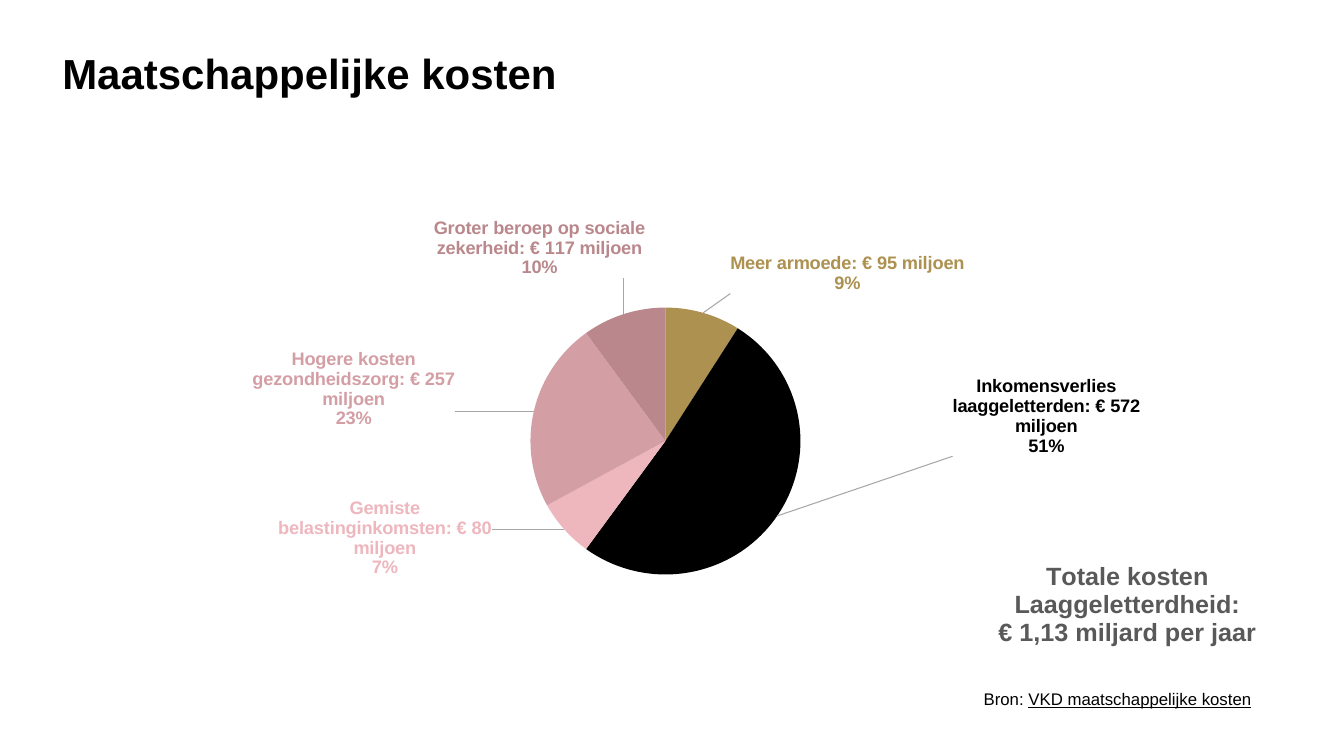
from lxml.etree import SubElement, tostring
from pptx import Presentation
from pptx.chart.data import CategoryChartData
from pptx.dml.color import RGBColor
from pptx.enum.chart import XL_CHART_TYPE as ChartType, XL_LABEL_POSITION as LabelPosition
from pptx.enum.text import MSO_ANCHOR as Anchor, MSO_AUTO_SIZE as AutoSize, PP_ALIGN as Align
from pptx.oxml import parse_xml
from pptx.oxml.ns import nsdecls, qn
from pptx.util import Cm, Pt

FONT = "Arial"
COLORS = {
    "text": "000000", "total": "595959", "leader": "A6A6A6",
    "poverty": "AD9150", "income": "000000", "tax": "EEB7BE",
    "health": "D39FA5", "security": "BA888C",
}
COSTS = [
    ("Meer armoede: € 95 miljoen", 9, "poverty", (2.1, -2.6)),
    ("Inkomensverlies laaggeletterden: € 572 miljoen", 51, "income", (14, -27)),
    ("Gemiste belastinginkomsten: € 80 miljoen", 7, "tax", (-5.6, -6.5)),
    ("Hogere kosten gezondheidszorg: € 257 miljoen", 23, "health", (-6, 3.5)),
    ("Groter beroep op sociale zekerheid: € 117 miljoen", 10, "security", (1.9, -5.8)),
]
TOTAL_LINES = ["Totale kosten", "Laaggeletterdheid:", "€ 1,13 miljard per jaar"]


def set_font(font, size, color, bold=False):
    """Apply the slide's typeface with a size, colour and weight."""
    font.name = FONT
    font.size = Pt(size)
    font.bold = bold
    font.color.rgb = RGBColor.from_string(COLORS[color])


def prepare_frame(shape, box):
    """Place a text shape in its box without margins and return its first paragraph."""
    shape.left, shape.top, shape.width, shape.height = box
    frame = shape.text_frame
    frame.margin_left = frame.margin_top = frame.margin_right = frame.margin_bottom = 0
    frame.word_wrap = True
    frame.auto_size = AutoSize.NONE
    frame.vertical_anchor = Anchor.TOP
    paragraph = frame.paragraphs[0]
    paragraph.alignment = Align.LEFT
    return paragraph


def manual_layout(percentages, inner=False, edge=False):
    """Build a chart layout from percentages of the chart's width and height."""
    layout = parse_xml(f"<c:layout {nsdecls('c')}><c:manualLayout/></c:layout>")
    settings = [("layoutTarget", "inner")] if inner else []
    if edge:
        settings += [("xMode", "edge"), ("yMode", "edge")]
    settings += [(name, str(value / 100)) for name, value in zip("xywh", percentages)]
    for name, value in settings:
        SubElement(layout[0], qn(f"c:{name}")).set("val", value)
    return layout


def replace_layout(element, layout, index):
    """Swap the layout of a chart element for the given one."""
    for old_layout in element.findall(qn("c:layout")):
        element.remove(old_layout)
    element.insert(index, layout)


def add_title(slide, box):
    """Fill the title placeholder."""
    paragraph = prepare_frame(slide.shapes.title, box)
    paragraph.text = "Maatschappelijke kosten"
    paragraph.line_spacing = 0.9
    set_font(paragraph.font, 30, "text", True)


def add_total(chart):
    """Write the total costs as the chart title at the lower right."""
    frame = chart.chart_title.text_frame
    for index, line in enumerate(TOTAL_LINES):
        paragraph = frame.add_paragraph() if index else frame.paragraphs[0]
        paragraph.text = line
        paragraph.alignment = Align.CENTER
        set_font(paragraph.font, 18, "total", True)
    chart.chart_title.include_in_layout = False
    replace_layout(chart.chart_title._element, manual_layout((78.3, 83.3), edge=True), 1)


def add_labels(series):
    """Colour the slices and place their labels with leader lines."""
    labels = series.data_labels
    labels.show_value = False
    labels.show_percentage = labels.show_category_name = True
    labels.position = LabelPosition.OUTSIDE_END
    for index, (_, _, color, offset) in enumerate(COSTS):
        point = series.points[index]
        point.format.fill.solid()
        point.format.fill.fore_color.rgb = RGBColor.from_string(COLORS[color])
        point.format.line.fill.background()
        set_font(point.data_label.font, 13, color, True)
        point.data_label.position = LabelPosition.OUTSIDE_END
        label = series._element.xpath(f".//c:dLbl[c:idx/@val='{index}']")[0]
        replace_layout(label, manual_layout(offset), 1)
        for name, shown in (("showVal", "0"), ("showCatName", "1"), ("showPercent", "1")):
            label.find(qn(f"c:{name}")).set("val", shown)
        SubElement(label, qn("c:separator")).text = "\n"
    leader_switch = series._element.xpath(".//c:dLbls/c:showLeaderLines")[0]
    leader_switch.set("val", "1")
    leader_switch.addnext(parse_xml(
        f"<c:leaderLines {nsdecls('c', 'a')}><c:spPr><a:ln w='9525'><a:solidFill>"
        f"<a:srgbClr val='{COLORS['leader']}'/></a:solidFill></a:ln></c:spPr></c:leaderLines>"))


def add_cost_chart(slide, box):
    """Draw the pie of social costs."""
    data = CategoryChartData()
    data.categories = [cost[0] for cost in COSTS]
    data.add_series("Series 1", [cost[1] for cost in COSTS])
    chart = slide.shapes.add_chart(ChartType.PIE, *box, data).chart
    chart.has_legend = False
    set_font(chart.font, 10, "text")
    chart.plots[0].vary_by_categories = True
    add_total(chart)
    add_labels(chart.plots[0].series[0])
    plot_area = chart._chartSpace.xpath(".//c:plotArea")[0]
    replace_layout(plot_area, manual_layout((40.14, 35.7, 22.17, 50.76), True, True), 0)


def add_source(slide, box):
    """Write the source line."""
    paragraph = prepare_frame(slide.shapes.add_textbox(*box), box)
    paragraph.line_spacing = 1.1
    paragraph.add_run().text = "Bron: "
    reference = paragraph.add_run()
    reference.text = "VKD maatschappelijke kosten"
    reference.font.underline = True
    set_font(paragraph.font, 12, "text")


def main():
    """Build and save the slide."""
    presentation = Presentation()
    presentation.slide_width, presentation.slide_height = Cm(33.87), Cm(19.05)
    slide = presentation.slides.add_slide(presentation.slide_layouts[5])
    add_title(slide, (Cm(1.57), Cm(1.35), Cm(30.63), Cm(3.33)))
    add_cost_chart(slide, (Cm(1.04), Cm(3.02), Cm(30.71), Cm(13.41)))
    add_source(slide, (Cm(24.79), Cm(17.3), Cm(7.26), Cm(0.84)))
    presentation.save("out.pptx")


if __name__ == "__main__":
    main()
